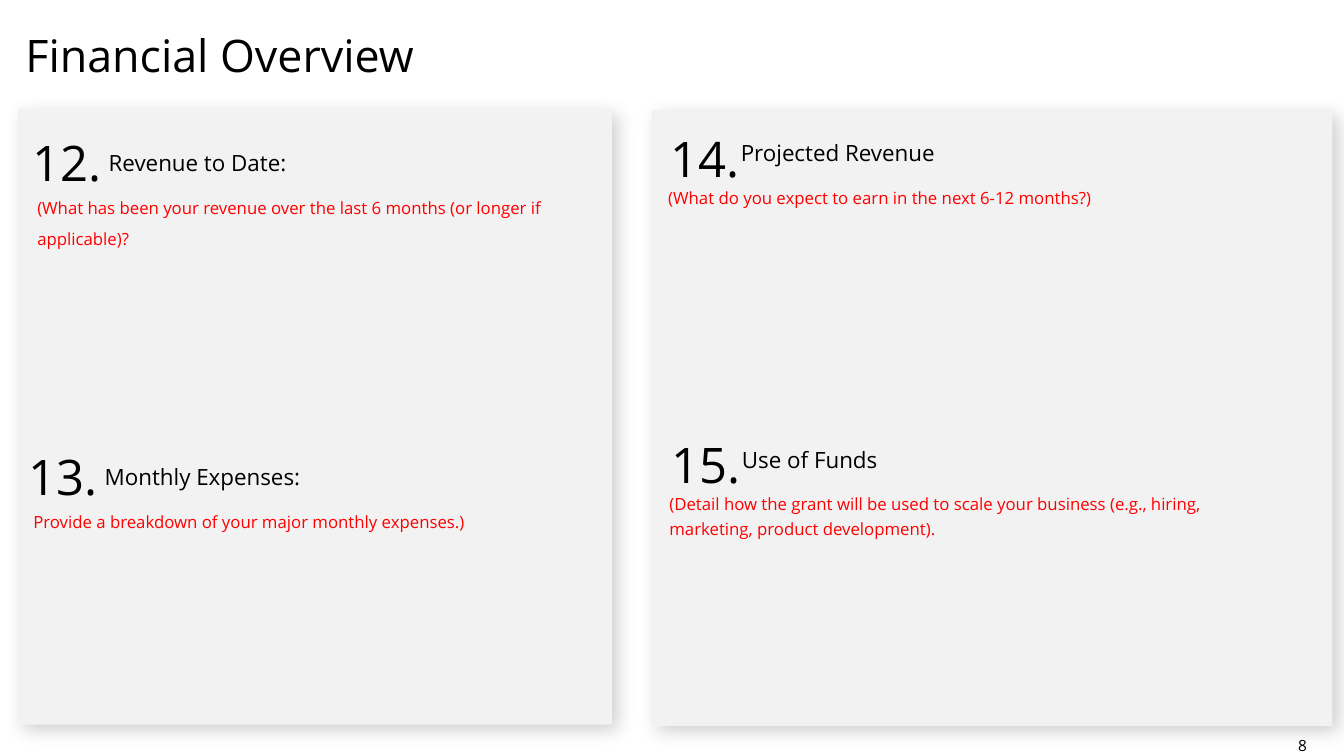
from dataclasses import dataclass
from typing import Any

from lxml import etree
from pptx import Presentation
from pptx.dml.color import RGBColor
from pptx.enum.shapes import MSO_SHAPE
from pptx.enum.text import MSO_ANCHOR, PP_ALIGN
from pptx.oxml.ns import qn
from pptx.util import Cm, Pt

RECTANGLE = MSO_SHAPE.RECTANGLE
TOP = MSO_ANCHOR.TOP
LEFT, CENTER = PP_ALIGN.LEFT, PP_ALIGN.CENTER


def colour(code):
    """Turn a hex string into a colour."""
    return RGBColor.from_string(code)


@dataclass
class SlideBuilder:
    """Hold the style and the current slide."""

    page: Any
    font: str = "Open Sans"
    ink: str = "000000"
    hint_ink: str = "FF0000"
    panel_fill: str = "F2F2F2"

    def fill_text(self, box, text, size, ink=None, align=LEFT, spacing=1.0, wrap=True):
        """Fill a box with one formatted paragraph."""
        frame = box.text_frame
        frame.margin_left = frame.margin_right = 0
        frame.margin_top = frame.margin_bottom = 0
        frame.vertical_anchor = TOP
        frame.word_wrap = wrap
        para = frame.paragraphs[0]
        para.text = text
        para.alignment = align
        para.line_spacing = spacing
        para.space_before = Pt(0)
        para.font.name = self.font
        para.font.size = Pt(size)
        para.font.color.rgb = colour(ink or self.ink)

    def title(self, text, left, top, width, height):
        """Place and format the title placeholder."""
        box = self.page.shapes.title
        box.left, box.top, box.width, box.height = map(Cm, (left, top, width, height))
        self.fill_text(box, text, 32)

    def panel(self, left, top, width, height):
        """Draw a grey panel with a soft shadow."""
        box = self.page.shapes.add_shape(RECTANGLE, *map(Cm, (left, top, width, height)))
        box.fill.solid()
        box.fill.fore_color.rgb = colour(self.panel_fill)
        box.line.fill.background()
        box.shadow.inherit = False
        effects = box._element.spPr.find(qn("a:effectLst"))
        shadow = etree.SubElement(
            effects, qn("a:outerShdw"), blurRad=str(Pt(13)), dist=str(Pt(6)),
            dir=str(45 * 60000), algn="tl", rotWithShape="0")
        tint = etree.SubElement(shadow, qn("a:srgbClr"), val=self.ink)
        etree.SubElement(tint, qn("a:alpha"), val="18000")

    def text(self, shapes, text, left, top, width, height, size, **style):
        """Add a text box to the slide or to a group."""
        box = shapes.add_textbox(*map(Cm, (left, top, width, height)))
        self.fill_text(box, text, size, **style)

    def question(self, number, label, hint, left, top, label_at, hint_at, spacing):
        """Add a grouped number, label and hint."""
        shapes = self.page.shapes.add_group_shape().shapes
        self.text(shapes, number, left, top, 1.78, 1.5, 35, wrap=False)
        self.text(shapes, label, left + label_at[0], top + label_at[1],
                  5.1, 0.69, 16, wrap=False)
        self.text(shapes, hint, left + hint_at[0], top + hint_at[1],
                  13.6, 1.25, 12, ink=self.hint_ink, spacing=spacing)


def main():
    """Build and save the financial overview slide."""
    deck = Presentation()
    deck.slide_width, deck.slide_height = Cm(33.87), Cm(19.05)
    page = deck.slides.add_slide(deck.slide_layouts[5])
    builder = SlideBuilder(page)

    builder.title("Financial Overview", 0.64, 0.69, 31.5, 1.37)
    builder.panel(0.46, 2.74, 14.96, 15.52)
    builder.panel(16.43, 2.77, 17.15, 15.52)

    left_style = ((1.93, 0.41), (0.13, 1.39), 1.5)
    right_style = ((1.78, 0.28), (-0.05, 1.37), 1.25)
    questions = [
        ("12.", "Revenue to Date:",
         "(What has been your revenue over the last 6 months (or longer if applicable)?",
         0.81, 3.35, *left_style),
        ("13.", "Monthly Expenses:",
         "Provide a breakdown of your major monthly expenses.)",
         0.71, 11.25, *left_style),
        ("14.", "Projected Revenue",
         "(What do you expect to earn in the next 6-12 months?)",
         16.89, 3.23, *right_style),
        ("15.", "Use of Funds",
         "(Detail how the grant will be used to scale your business "
         "(e.g., hiring, marketing, product development).",
         16.92, 10.95, *right_style),
    ]
    for question in questions:
        builder.question(*question)

    builder.text(page.shapes, "8", 31.78, 18.54, 2.09, 0.48, 11, align=CENTER)
    deck.save("out.pptx")


if __name__ == "__main__":
    main()
